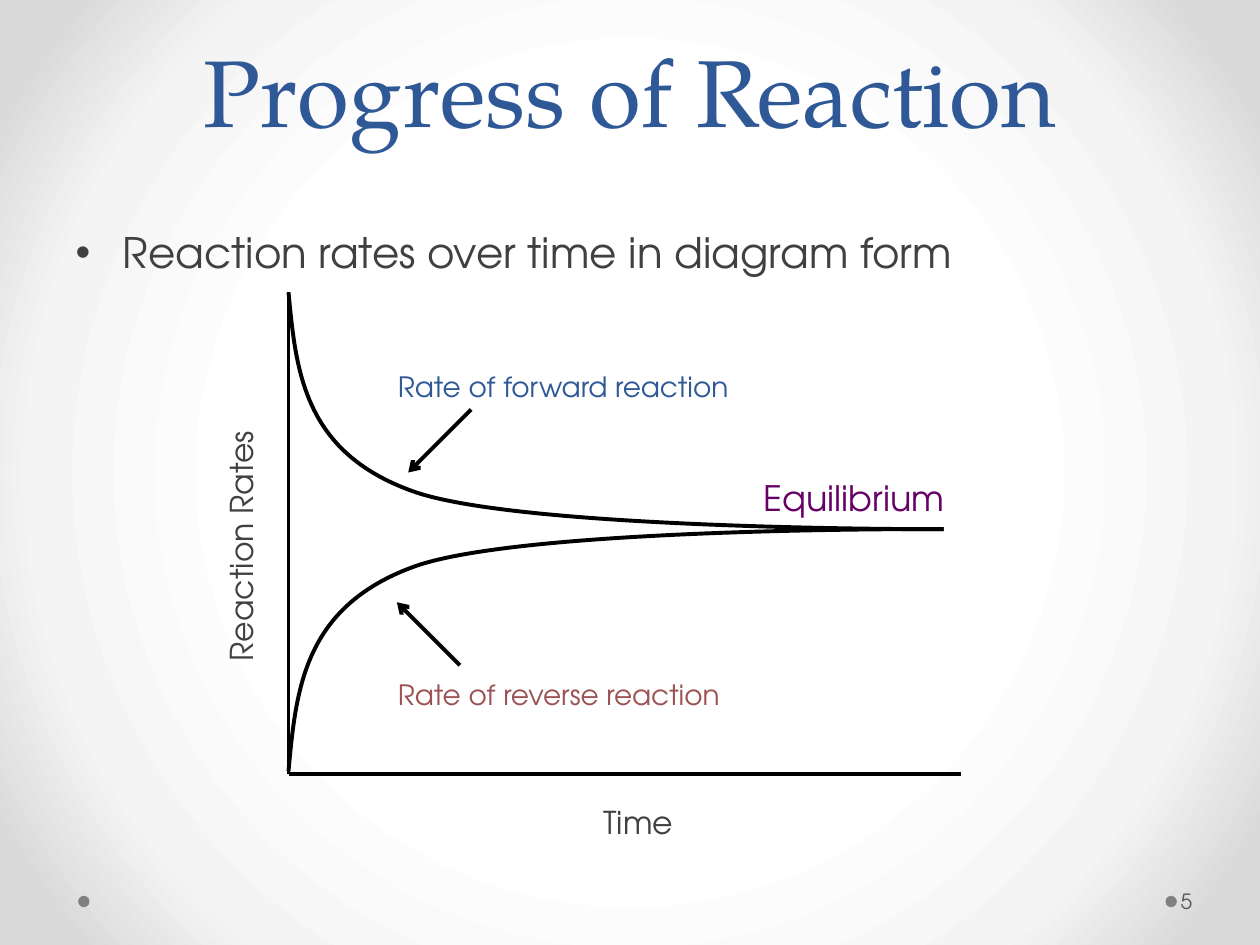
from lxml import etree
from pptx import Presentation
from pptx.dml.color import RGBColor
from pptx.enum.shapes import MSO_CONNECTOR, MSO_SHAPE
from pptx.enum.text import MSO_ANCHOR, MSO_AUTO_SIZE, PP_ALIGN
from pptx.oxml.ns import qn
from pptx.util import Inches, Pt

STRAIGHT = MSO_CONNECTOR.STRAIGHT
OVAL = MSO_SHAPE.OVAL
BOTTOM, MIDDLE, TOP = MSO_ANCHOR.BOTTOM, MSO_ANCHOR.MIDDLE, MSO_ANCHOR.TOP
NO_FIT = MSO_AUTO_SIZE.NONE
CENTER = PP_ALIGN.CENTER

BLACK = RGBColor(0x00, 0x00, 0x00)
BLUE = RGBColor(0x2F, 0x58, 0x97)
RED = RGBColor(0x9C, 0x52, 0x52)
PURPLE = RGBColor(0x66, 0x00, 0x66)
DARK = RGBColor(0x40, 0x40, 0x40)
GRAY = RGBColor(0x59, 0x59, 0x59)
DOT = RGBColor(0x80, 0x80, 0x80)
BACKDROP = [
    (50, RGBColor(0xFF, 0xFF, 0xFF)),
    (76, RGBColor(0xF4, 0xF4, 0xF4)),
    (92, RGBColor(0xDA, 0xDA, 0xDA)),
]

HEADING_FONT = "TeX Gyre Pagella"
BODY_FONT = "TeX Gyre Adventor"
COLS, ROWS = 100, 75
CELL = Inches(0.1)
LINE_WIDTH = Pt(2.25)

LEFT, RIGHT = 22.9, 76.3
AXIS_TOP, AXIS_BOTTOM = 23.2, 61.4
EQUILIBRIUM = (74.9, 42)


def grid(*cells):
    return [round(c * CELL) for c in cells]


def set_backdrop(s):
    s.background.fill.gradient()
    grad = next(s.element.iter(qn("a:gradFill")))
    for child in list(grad):
        grad.remove(child)
    stops = etree.SubElement(grad, qn("a:gsLst"))
    for pos, color in BACKDROP:
        gs = etree.SubElement(stops, qn("a:gs"), pos=str(pos * 1000))
        etree.SubElement(gs, qn("a:srgbClr"), val=str(color))
    path = etree.SubElement(grad, qn("a:path"))
    path.set("path", "circle")
    etree.SubElement(path, qn("a:fillToRect"), dict.fromkeys("ltrb", "50000"))


def write(sp, text, size, color, font=BODY_FONT, anchor=TOP):
    tf = sp.text_frame
    for name, value in {
        "word_wrap": True, "auto_size": NO_FIT, "vertical_anchor": anchor,
    }.items():
        setattr(tf, name, value)
    p = tf.paragraphs[0]
    r = p.add_run()
    r.text = text
    for name, value in {"name": font, "size": Pt(size)}.items():
        setattr(r.font, name, value)
    r.font.color.rgb = color
    return p


def set_margins(sp, **margins):
    for side, cells in margins.items():
        setattr(sp.text_frame, f"margin_{side}", round(cells * CELL))


def fill_placeholder(sp, box, text, size, color, **style):
    sp.left, sp.top, sp.width, sp.height = grid(*box)
    return write(sp, text, size, color, **style)


def add_label(s, box, text, size, color, **style):
    sp = s.shapes.add_textbox(*grid(*box))
    write(sp, text, size, color, **style)
    return sp


def style_line(line):
    line.color.rgb = BLACK
    line.width = LINE_WIDTH


def add_line(s, start, end, arrow=False):
    sp = s.shapes.add_connector(STRAIGHT, *grid(*start, *end))
    style_line(sp.line)
    props = sp.element.spPr
    if arrow:
        etree.SubElement(props.find(qn("a:ln")), qn("a:tailEnd"), type="arrow")
    etree.SubElement(props, qn("a:effectLst"))


def add_curve(s, start, *controls):
    builder = s.shapes.build_freeform(*grid(*start), scale=1.0)
    builder.add_line_segments([grid(*c) for c in controls], close=False)
    sp = builder.convert_to_shape()
    sp.shadow.inherit = False
    sp.fill.background()
    style_line(sp.line)
    path = next(sp.element.iter(qn("a:path")))
    segments = path.findall(qn("a:lnTo"))
    for i in range(0, len(segments), 3):
        bezier = etree.SubElement(path, qn("a:cubicBezTo"))
        for segment in segments[i:i + 3]:
            bezier.append(segment[0])
            path.remove(segment)


def add_dot(s, col):
    sp = s.shapes.add_shape(OVAL, *grid(col, 71.1, 0.9, 0.9))
    sp.shadow.inherit = False
    sp.fill.solid()
    sp.fill.fore_color.rgb = DOT
    sp.line.fill.background()


def draw_diagram(s):
    origin = (LEFT, AXIS_BOTTOM)
    add_line(s, (LEFT, AXIS_TOP), origin)
    add_line(s, origin, (RIGHT, AXIS_BOTTOM))
    add_curve(s, (LEFT, AXIS_TOP), (23.5, 29.5), (24.1, 35.9), (32.8, 39),
              (41.5, 42.1), EQUILIBRIUM, EQUILIBRIUM)
    add_curve(s, (LEFT, 61.2), (23.5, 54.7), (24.1, 48.2), (32.8, 45),
              (41.5, 41.8), EQUILIBRIUM, EQUILIBRIUM)
    add_line(s, (37.4, 32.5), (32.4, 37.5), arrow=True)
    add_line(s, (36.5, 52.8), (31.5, 47.8), arrow=True)
    add_label(s, (59.6, 37.3, 16.7, 4.7), "Equilibrium", 20, PURPLE)
    add_label(s, (30.6, 28.8, 29, 3.8), "Rate of forward reaction", 16, BLUE)
    add_label(s, (30.6, 53.3, 29, 3.8), "Rate of reverse reaction", 16, RED)
    sp = add_label(s, (17.1, 32.5, 3.8, 20), "Reaction Rates", 18, DARK)
    sp.element.txBody.find(qn("a:bodyPr")).set("vert", "vert270")
    set_margins(sp, left=0.5, right=0, top=1, bottom=0)
    add_label(s, (46.9, 63.2, 7.8, 3.8), "Time", 18, DARK)


def main():
    prs = Presentation()
    prs.slide_width, prs.slide_height = grid(COLS, ROWS)
    s = prs.slides.add_slide(prs.slide_layouts[1])
    set_backdrop(s)
    for col in (92.5, 6.2):
        add_dot(s, col)
    p = fill_placeholder(s.shapes.title, (5, 0, 90, 12.1),
                         "Progress of Reaction", 54, BLUE,
                         font=HEADING_FONT, anchor=BOTTOM)
    p.alignment = CENTER
    p.line_spacing = Pt(58)
    fill_placeholder(s.placeholders[1], (5, 17.5, 90, 49.5),
                     "Reaction rates over time in diagram form", 24, DARK)
    draw_diagram(s)
    sp = add_label(s, (93.4, 69.5, 6.1, 4), "5", 12, GRAY, anchor=MIDDLE)
    set_margins(sp, left=0.3, right=0.5)
    prs.save("out.pptx")


if __name__ == "__main__":
    main()
